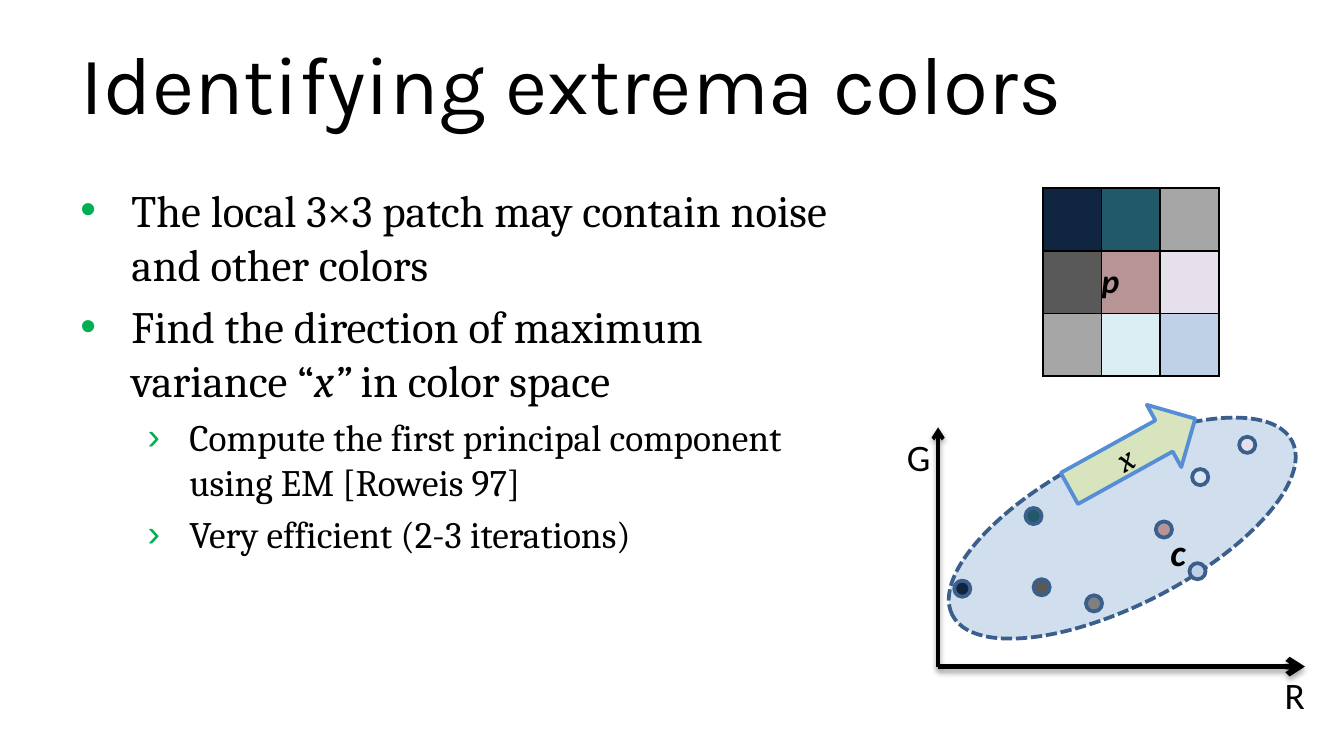
from dataclasses import dataclass

import lxml.etree
import pptx
import pptx.dml.color
import pptx.enum.dml
import pptx.enum.shapes
import pptx.enum.text
import pptx.oxml
import pptx.oxml.ns
import pptx.util

PX = 9144  # EMU per px, at 100 px to the inch
SLIDE_WIDTH = 1000 * PX
SLIDE_HEIGHT = SLIDE_WIDTH * 9 // 16
MIDDLE = pptx.enum.text.MSO_ANCHOR.MIDDLE
LEFT = pptx.enum.text.PP_ALIGN.LEFT
SHAPES = pptx.enum.shapes.MSO_SHAPE


@dataclass(frozen=True)
class Theme:
    heading: str = "Karla"
    serif: str = "Cambria"
    sans: str = "Calibri"
    title_size: int = 44
    body_size: int = 24
    detail_size: int = 20
    label_size: int = 20
    symbol_size: int = 18
    ink: str = "000000"
    bullet: str = "00B050"
    outline: str = "3A5F8C"
    cloud: str = "95B3D7"
    arrow: str = "D7E4BD"
    arrow_line: str = "558ED5"


THEME = Theme()


@dataclass(frozen=True)
class Box:
    left: int
    top: int
    width: int
    height: int

    def emu(self) -> list[int]:
        return [value * PX for value in (self.left, self.top, self.width, self.height)]


@dataclass(frozen=True)
class Run:
    text: str
    italic: bool = False
    bold: bool = False


@dataclass(frozen=True)
class Bullet:
    runs: tuple[Run, ...]
    level: int = 0


@dataclass(frozen=True)
class Sample:
    left: int
    top: int
    color: str


@dataclass(frozen=True)
class Axis:
    end: tuple[int, int]
    weight: int
    shadow_alpha: int
    shadow_distance: float


@dataclass(frozen=True)
class Label:
    box: Box
    run: Run
    wrap: bool = False


BULLETS = (
    Bullet((Run("The local 3×3 patch may contain noise and other colors"),)),
    Bullet((Run("Find the direction of maximum variance “"), Run("x” ", italic=True),
            Run("in color space"))),
    Bullet((Run("Compute the first principal component using EM [Roweis 97]"),), 1),
    Bullet((Run("Very efficient (2-3 iterations)"),), 1),
)
PATCH = (
    ("10253F", "215968", "A6A6A6"),
    ("595959", "B79596", "E6E0EC"),
    ("A6A6A6", "DBEEF4", "BFD1E7"),
)
SAMPLES = (
    Sample(860, 388, "B79596"), Sample(922, 325, "E6E0EC"),
    Sample(887, 349, "DCE6F2"), Sample(885, 419, "BFD1E7"),
    Sample(763, 378, "215968"), Sample(710, 432, "0F243E"),
    Sample(769, 431, "595959"), Sample(808, 443, "808080"),
)
SAMPLE_SIZE = 12
ORIGIN = (698, 496)
AXES = (Axis((698, 318), 2, 38, 1.6), Axis((971, 496), 3, 35, 1.8))
LABELS = (
    Label(Box(946, 495, 35, 44), Run("R")),
    Label(Box(665, 318, 38, 44), Run("G")),
    Label(Box(861, 389, 24, 44), Run("c", italic=True, bold=True), wrap=True),
)


def rgb(color: str) -> pptx.dml.color.RGBColor:
    return pptx.dml.color.RGBColor.from_string(color)


def add_xml(parent: lxml.etree.ElementBase, xml: str) -> None:
    """Append a DrawingML fragment."""
    namespace = pptx.oxml.ns.nsdecls("a")
    parent.append(pptx.oxml.parse_xml(f"<a:wrap {namespace}>{xml}</a:wrap>")[0])


def add_run(paragraph, run: Run, font: str, size: int) -> None:
    part = paragraph.add_run()
    part.text = run.text
    part.font.name = font
    part.font.size = pptx.util.Pt(size)
    part.font.italic = run.italic
    part.font.bold = run.bold
    part.font.color.rgb = rgb(THEME.ink)


def add_figure(slide, kind, box: Box, fill: str, line: str, rotation: float = 0):
    shape = slide.shapes.add_shape(kind, *box.emu())
    shape.shadow.inherit = False
    shape.rotation = rotation
    shape.fill.solid()
    shape.fill.fore_color.rgb = rgb(fill)
    shape.line.color.rgb = rgb(line)
    shape.line.width = pptx.util.Pt(2)
    return shape


def add_title(slide) -> None:
    title = slide.shapes.title
    title.left, title.top, title.width, title.height = Box(50, 14, 900, 94).emu()
    title.text_frame.vertical_anchor = MIDDLE
    paragraph = title.text_frame.paragraphs[0]
    paragraph.alignment = LEFT
    add_run(paragraph, Run("Identifying extrema colors"), THEME.heading, THEME.title_size)


def add_bullets(slide, bullets: tuple[Bullet, ...]) -> None:
    frame = slide.shapes.add_textbox(*Box(50, 131, 592, 371).emu()).text_frame
    frame.word_wrap = True
    for index, bullet in enumerate(bullets):
        paragraph = frame.add_paragraph() if index else frame.paragraphs[0]
        paragraph.level = bullet.level
        size = THEME.detail_size if bullet.level else THEME.body_size
        paragraph.space_before = pptx.util.Pt(size * 0.2)
        margin, hanging, mark = (81, 31, "›") if bullet.level else (38, 38, "•")
        properties = paragraph._p.get_or_add_pPr()
        properties.set("marL", str(margin * PX))
        properties.set("indent", str(-hanging * PX))
        add_xml(properties, f'<a:buClr><a:srgbClr val="{THEME.bullet}"/></a:buClr>')
        add_xml(properties, '<a:buFont typeface="Arial"/>')
        add_xml(properties, f'<a:buChar char="{mark}"/>')
        for run in bullet.runs:
            add_run(paragraph, run, THEME.serif, size)


def add_patch(slide, colors: tuple[tuple[str, ...], ...]) -> None:
    box = Box(776, 140, 131, 140)
    table = slide.shapes.add_table(len(colors), len(colors[0]), *box.emu()).table
    table.first_row = table.horz_banding = False
    for row, row_colors in enumerate(colors):
        for column, color in enumerate(row_colors):
            cell = table.cell(row, column)
            for side in "LRTB":
                add_xml(cell._tc.get_or_add_tcPr(),
                        f'<a:ln{side} w="12700"><a:solidFill><a:srgbClr val="{THEME.ink}"/>'
                        f"</a:solidFill></a:ln{side}>")
            cell.fill.solid()
            cell.fill.fore_color.rgb = rgb(color)
    center = table.cell(1, 1)
    center.vertical_anchor = MIDDLE
    center.margin_left = center.margin_right = center.margin_top = center.margin_bottom = 0
    add_run(center.text_frame.paragraphs[0], Run("p", italic=True, bold=True),
            THEME.sans, THEME.symbol_size)


def add_axis(slide, axis: Axis) -> None:
    points = [value * PX for value in ORIGIN + axis.end]
    line = slide.shapes.add_connector(pptx.enum.shapes.MSO_CONNECTOR.STRAIGHT, *points)
    line.line.color.rgb = rgb(THEME.ink)
    line.line.width = pptx.util.Pt(axis.weight)
    add_xml(line.line._get_or_add_ln(), '<a:tailEnd type="arrow"/>')
    blur, distance = pptx.util.Pt(3.1), pptx.util.Pt(axis.shadow_distance)
    add_xml(line._element.spPr,
            f'<a:effectLst><a:outerShdw blurRad="{blur}" dist="{distance}" dir="5400000" '
            f'rotWithShape="0"><a:srgbClr val="{THEME.ink}">'
            f'<a:alpha val="{axis.shadow_alpha * 1000}"/></a:srgbClr>'
            "</a:outerShdw></a:effectLst>")


def add_label(slide, label: Label) -> None:
    frame = slide.shapes.add_textbox(*label.box.emu()).text_frame
    frame.word_wrap = label.wrap
    add_run(frame.paragraphs[0], label.run, THEME.sans, THEME.label_size)


def main() -> None:
    presentation = pptx.Presentation()
    presentation.slide_width, presentation.slide_height = SLIDE_WIDTH, SLIDE_HEIGHT
    slide = presentation.slides.add_slide(presentation.slide_layouts[5])

    # Ellipse around the color samples
    cloud = add_figure(slide, SHAPES.OVAL, Box(693, 336, 284, 114),
                       THEME.cloud, THEME.outline, 332.9)
    cloud.line.dash_style = pptx.enum.dml.MSO_LINE.SQUARE_DOT
    add_xml(cloud._element.spPr.find(".//" + pptx.oxml.ns.qn("a:srgbClr")),
            '<a:alpha val="43000"/>')

    # Title, bullets and pixel patch
    add_title(slide)
    add_bullets(slide, BULLETS)
    add_patch(slide, PATCH)

    # Color space plot
    for axis in AXES:
        add_axis(slide, axis)
    for sample in SAMPLES:
        add_figure(slide, SHAPES.OVAL, Box(sample.left, sample.top, SAMPLE_SIZE, SAMPLE_SIZE),
                   sample.color, THEME.outline)
    for label in LABELS:
        add_label(slide, label)

    # Direction of maximum variance
    arrow = add_figure(slide, SHAPES.RIGHT_ARROW, Box(789, 311, 107, 53),
                       THEME.arrow, THEME.arrow_line, 331)
    arrow.text_frame.vertical_anchor = MIDDLE
    paragraph = arrow.text_frame.paragraphs[0]
    paragraph.alignment = pptx.enum.text.PP_ALIGN.CENTER
    add_run(paragraph, Run("x", italic=True), THEME.serif, THEME.symbol_size)

    presentation.save("out.pptx")


if __name__ == "__main__":
    main()
